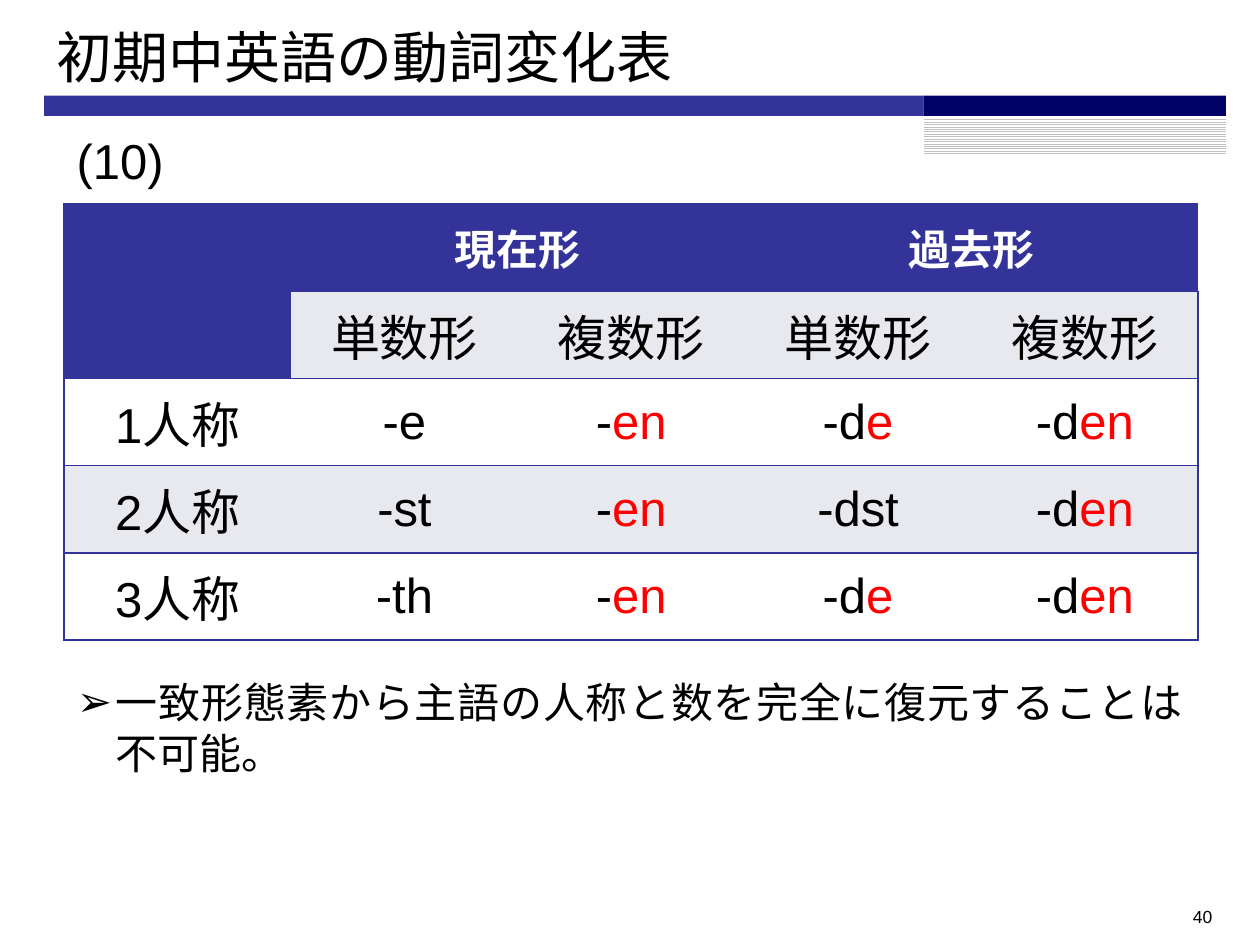
from lxml.etree import SubElement
from pptx import Presentation
from pptx.dml.color import RGBColor
from pptx.enum.dml import MSO_PATTERN
from pptx.enum.shapes import MSO_SHAPE
from pptx.enum.text import MSO_ANCHOR, MSO_AUTO_SIZE, PP_ALIGN
from pptx.oxml.ns import qn
from pptx.util import Inches, Pt

LATIN, CJK = "Arial", "Noto Sans CJK JP"
BLUE, NAVY, PALE = "333399", "000066", "E8E8EF"
BLACK, WHITE, RED, GRAY = "000000", "FFFFFF", "FF0000", "C0C0C0"

# A bar separates the stem from the ending shown in red.
HEADER = ["", "現在形", "", "過去形", ""]
ROWS = [
    ["", "単数形", "複数形", "単数形", "複数形"],
    ["1人称", "-e", "-|en", "-d|e", "-d|en"],
    ["2人称", "-st", "-|en", "-dst", "-d|en"],
    ["3人称", "-th", "-|en", "-d|e", "-d|en"],
]


def rgb(color):
    return RGBColor.from_string(color)


def place(sp, left, top, width, height):
    sp.left, sp.top = Inches(left), Inches(top)
    sp.width, sp.height = Inches(width), Inches(height)


def format_run(r, size, color=BLACK, bold=False, latin=LATIN):
    r.font.size = Pt(size)
    r.font.bold = bold
    r.font.name = latin
    r.font.color.rgb = rgb(color)
    SubElement(r._r.get_or_add_rPr(), qn("a:ea"), typeface=CJK)


def add_bar(slide, left, top, width, height, color):
    sp = slide.shapes.add_shape(MSO_SHAPE.RECTANGLE, Inches(left), Inches(top),
                                Inches(width), Inches(height))
    sp.shadow.inherit = False
    sp.line.fill.background()
    sp.fill.solid()
    sp.fill.fore_color.rgb = rgb(color)
    return sp


def add_hatched_bar(slide, left, top, width, height):
    fill = add_bar(slide, left, top, width, height, WHITE).fill
    fill.patterned()
    fill.pattern = MSO_PATTERN.LIGHT_HORIZONTAL
    fill.fore_color.rgb = rgb(GRAY)
    fill.back_color.rgb = rgb(WHITE)


def add_text(slide, left, top, width, height, text, size, align=PP_ALIGN.LEFT):
    sp = slide.shapes.add_textbox(Inches(left), Inches(top),
                                  Inches(width), Inches(height))
    sp.text_frame.word_wrap = True
    p = sp.text_frame.paragraphs[0]
    p.text = text
    p.alignment = align
    format_run(p.runs[0], size)


def set_title(slide, text):
    title = slide.shapes.title
    place(title, 0.35, 0.13, 9.38, 0.63)
    tf = title.text_frame
    tf.text = text
    tf.auto_size = MSO_AUTO_SIZE.NONE
    tf.vertical_anchor = MSO_ANCHOR.MIDDLE
    p = tf.paragraphs[0]
    p.alignment = PP_ALIGN.LEFT
    format_run(p.runs[0], 32, latin=CJK)


def set_bullet(slide, text):
    body = slide.placeholders[1]
    place(body, 0.51, 5.32, 8.98, 0.91)
    tf = body.text_frame
    tf.text = text
    tf.auto_size = MSO_AUTO_SIZE.NONE
    p = tf.paragraphs[0]
    p.alignment = PP_ALIGN.JUSTIFY
    p.space_before = Pt(0)
    p.line_spacing = Pt(29)
    format_run(p.runs[0], 24, latin=CJK)
    pPr = p._p.get_or_add_pPr()
    pPr.set("marL", str(Inches(0.31)))
    pPr.set("indent", str(Inches(-0.31)))
    SubElement(pPr, qn("a:buFont"), typeface=LATIN)
    SubElement(pPr, qn("a:buChar"), char="➢")


def set_borders(cell, sides):
    """Draw blue lines on the given sides (L, R, T, B) and none on the others."""
    tcPr = cell._tc.get_or_add_tcPr()
    for side in "LRTB":
        ln = SubElement(tcPr, qn(f"a:ln{side}"), w=str(Pt(1)))
        if side in sides:
            fill = SubElement(ln, qn("a:solidFill"))
            SubElement(fill, qn("a:srgbClr"), val=BLUE)
        else:
            SubElement(ln, qn("a:noFill"))


def fill_cell(cell, text, fill, size, color=BLACK, bold=False):
    cell.fill.solid()
    cell.fill.fore_color.rgb = rgb(fill)
    cell.vertical_anchor = MSO_ANCHOR.MIDDLE
    p = cell.text_frame.paragraphs[0]
    p.alignment = PP_ALIGN.CENTER
    for part, part_color in zip(text.split("|"), (color, RED)):
        if part:
            r = p.add_run()
            r.text = part
            format_run(r, size, part_color, bold)


def add_verb_table(slide):
    n_rows, n_cols = len(ROWS) + 1, len(HEADER)
    table = slide.shapes.add_table(n_rows, n_cols, Inches(0.51), Inches(1.62),
                                   Inches(9), Inches(3.46)).table
    for i, row in enumerate([HEADER] + ROWS):
        for j, text in enumerate(row):
            cell = table.cell(i, j)
            edge = {0: "L", n_cols - 1: "R"}.get(j, "")
            set_borders(cell, "TB" + edge)
            if i == 0 or (i == 1 and j == 0):
                fill_cell(cell, text, BLUE, 24, WHITE, True)
            else:
                fill_cell(cell, text, PALE if i % 2 else WHITE, 28)
    table.cell(0, 0).merge(table.cell(1, 0))
    for j in (1, 3):
        table.cell(0, j).merge(table.cell(0, j + 1))


def main():
    prs = Presentation()
    prs.slide_width, prs.slide_height = Inches(10), Inches(7.5)
    slide = prs.slides.add_slide(prs.slide_layouts[1])

    add_bar(slide, 0.35, 0.76, 6.98, 0.16, BLUE)
    add_hatched_bar(slide, 7.33, 0.93, 2.4, 0.3)
    add_bar(slide, 7.33, 0.76, 2.4, 0.16, NAVY)
    set_title(slide, "初期中英語の動詞変化表")
    add_text(slide, 0.51, 0.99, 0.94, 0.57, "(10)", 28)
    add_verb_table(slide)
    set_bullet(slide, "一致形態素から主語の人称と数を完全に復元することは不可能。")
    add_text(slide, 7.39, 7.14, 2.33, 0.29, "40", 10, PP_ALIGN.RIGHT)

    prs.save("out.pptx")


if __name__ == "__main__":
    main()
